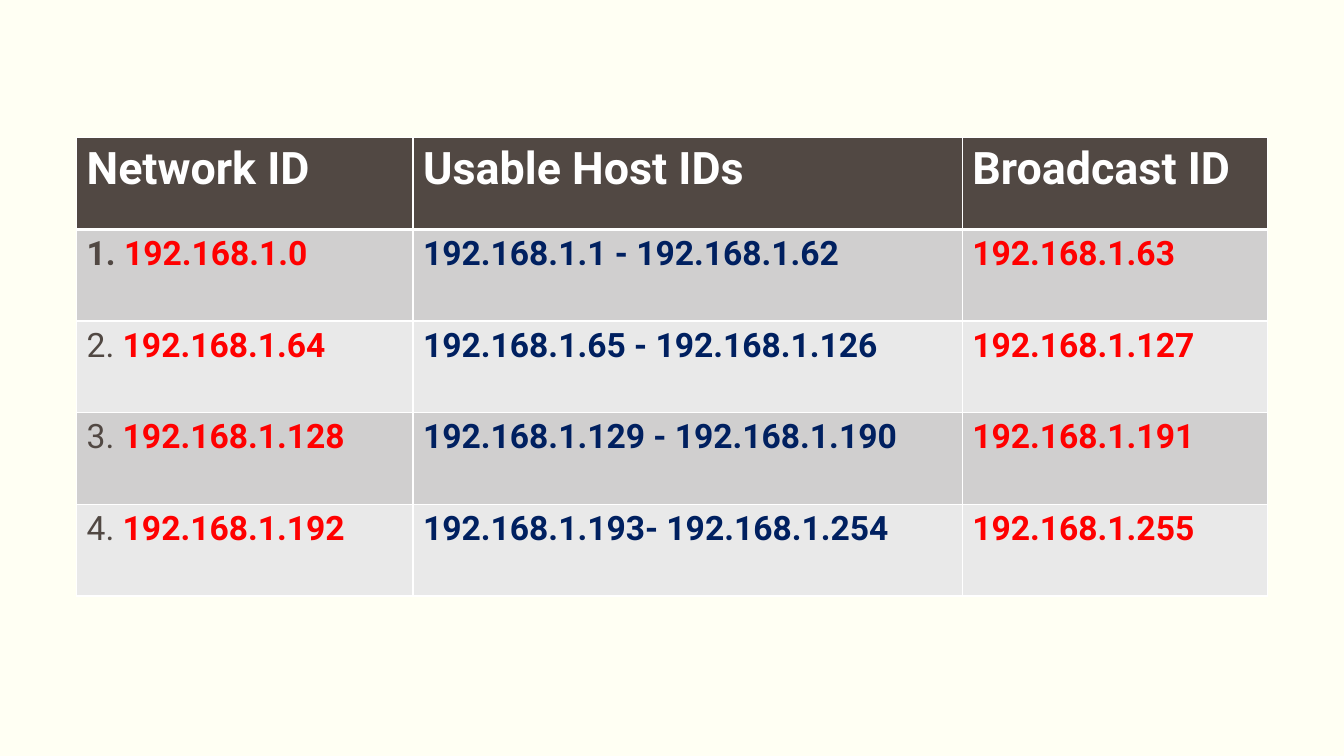
from dataclasses import dataclass

from lxml.etree import SubElement
from pptx import Presentation
from pptx.dml.color import RGBColor as Color
from pptx.oxml.ns import qn
from pptx.util import Cm, Pt


@dataclass(frozen=True)
class Theme:
    font: str = "Roboto"
    background: str = "FFFFF3"
    dark: str = "514843"
    white: str = "FFFFFF"
    red: str = "FF0000"
    navy: str = "002060"
    bands: tuple = ("D0CFCF", "E9E9E9")
    header_size: int = 32
    body_size: int = 24
    thin_line: int = 1
    thick_line: int = 3


HEADERS = ("Network ID", "Usable Host IDs", "Broadcast ID")
SUBNETS = (
    ("192.168.1.0", "192.168.1.1 - 192.168.1.62", "192.168.1.63"),
    ("192.168.1.64", "192.168.1.65 - 192.168.1.126", "192.168.1.127"),
    ("192.168.1.128", "192.168.1.129 - 192.168.1.190", "192.168.1.191"),
    ("192.168.1.192", "192.168.1.193- 192.168.1.254", "192.168.1.255"),
)
COLUMN_WIDTHS = (8.48, 13.84, 7.7)
ROW_HEIGHT = 2.31


class SlideBuilder:
    def __init__(self, presentation, theme):
        self.theme = theme
        self.slide = presentation.slides.add_slide(presentation.slide_layouts[6])
        fill = self.slide.background.fill
        fill.solid()
        fill.fore_color.rgb = Color.from_string(theme.background)

    def add_table(self, left, top, column_widths, row_count, row_height):
        shape = self.slide.shapes.add_table(
            row_count, len(column_widths), Cm(left), Cm(top),
            Cm(sum(column_widths)), Cm(row_height * row_count))
        table = shape.table
        for column, width in zip(table.columns, column_widths):
            column.width = Cm(width)
        for row in table.rows:
            row.height = Cm(row_height)
        return table

    def add_borders(self, cell, top, bottom):
        """Draw white cell borders; top and bottom are widths in points."""
        thin = self.theme.thin_line
        properties = cell._tc.get_or_add_tcPr()
        for side, width in (("L", thin), ("R", thin), ("T", top), ("B", bottom)):
            line = SubElement(properties, qn(f"a:ln{side}"), w=str(Pt(width)))
            fill = SubElement(line, qn("a:solidFill"))
            SubElement(fill, qn("a:srgbClr"), val=self.theme.white)

    def fill_cell(self, cell, color, size, runs, top, bottom):
        """Style a cell and write its (text, color, bold) runs."""
        self.add_borders(cell, top, bottom)
        cell.fill.solid()
        cell.fill.fore_color.rgb = Color.from_string(color)
        paragraph = cell.text_frame.paragraphs[0]
        for text, text_color, bold in runs:
            run = paragraph.add_run()
            run.text = text
            run.font.name = self.theme.font
            run.font.size = Pt(size)
            run.font.bold = bold
            run.font.color.rgb = Color.from_string(text_color)

    def add_subnet_table(self):
        theme = self.theme
        thin, thick = theme.thin_line, theme.thick_line
        table = self.add_table(1.93, 3.47, COLUMN_WIDTHS, len(SUBNETS) + 1, ROW_HEIGHT)
        for column, header in enumerate(HEADERS):
            self.fill_cell(table.cell(0, column), theme.dark, theme.header_size,
                           [(header, theme.white, True)], thin, thick)
        for number, subnet in enumerate(SUBNETS, start=1):
            band = theme.bands[(number - 1) % 2]
            top = thick if number == 1 else thin
            for column, address in enumerate(subnet):
                color = theme.navy if column == 1 else theme.red
                runs = [(address, color, True)]
                if column == 0:
                    runs.insert(0, (f"{number}. ", theme.dark, number == 1))
                self.fill_cell(table.cell(number, column), band, theme.body_size,
                               runs, top, thin)


def main():
    presentation = Presentation()
    presentation.slide_width = Cm(33.87)
    presentation.slide_height = Cm(19.05)
    SlideBuilder(presentation, Theme()).add_subnet_table()
    presentation.save("out.pptx")


if __name__ == "__main__":
    main()
